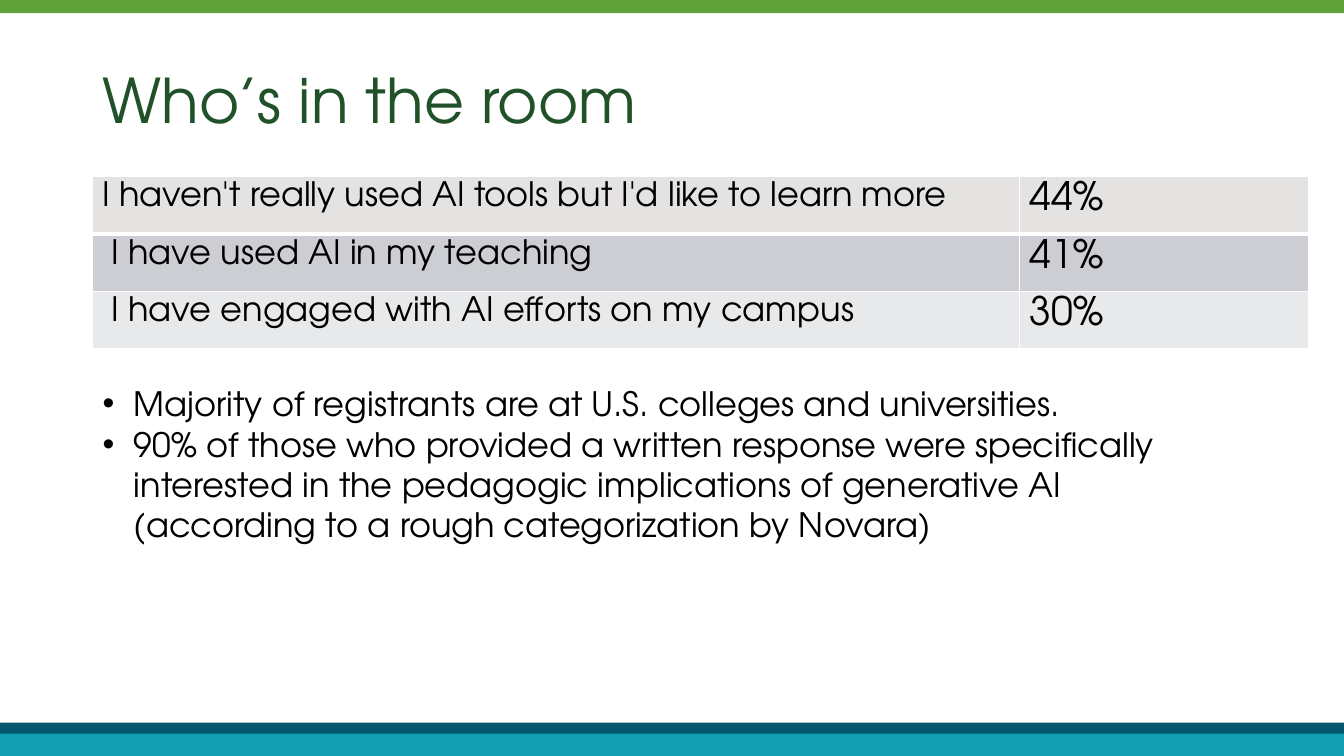
import pptx
import pptx.dml.color
import pptx.enum.shapes
import pptx.enum.text
import pptx.oxml.ns
import pptx.util
from lxml import etree

Cm = pptx.util.Cm
Pt = pptx.util.Pt

FONT = "TeX Gyre Adventor"
COLORS = {
    "green": "5FA039", "navy": "03566C", "teal": "129EB0",
    "title": "205128", "text": "000000", "border": "FFFFFF",
    "first_row": "E4E3E2", "dark_row": "CCCED4", "light_row": "E7E9EB",
}
SURVEY = [
    ("I haven't really used AI tools but I'd like to learn more", "44%", "first_row", 1.14, 0.25),
    ("I have used AI in my teaching", "41%", "dark_row", 1.42, 0.48),
    ("I have engaged with AI efforts on my campus", "30%", "light_row", 1.42, 0.48),
]
FINDINGS = [
    "Majority of registrants are at U.S. colleges and universities.",
    "90% of those who provided a written response were specifically interested in "
    "the pedagogic implications of generative AI (according to a rough categorization by Novara)",
]


def rgb(name):
    """Return the named colour."""
    return pptx.dml.color.RGBColor.from_string(COLORS[name])


def style(para, size, color="text"):
    """Set the font of a paragraph."""
    para.font.name = FONT
    para.font.size = Pt(size)
    para.font.color.rgb = rgb(color)


def place(shape, box):
    """Move a shape to a box given in centimetres."""
    shape.left, shape.top, shape.width, shape.height = map(Cm, box)


def add_bar(page, box, color):
    """Add a plain coloured band."""
    bar = page.shapes.add_shape(pptx.enum.shapes.MSO_SHAPE.RECTANGLE, *map(Cm, box))
    bar.shadow.inherit = False
    bar.fill.solid()
    bar.fill.fore_color.rgb = rgb(color)
    bar.line.fill.background()


def add_bands(page, box):
    """Add the bands along the top and bottom edges of the slide."""
    left, top, width, height = box
    add_bar(page, (left, top, width, 0.33), "green")
    for depth, color in ((0.84, "navy"), (0.56, "teal")):
        add_bar(page, (left, top + height - depth, width, depth), color)


def fill_title(page, box):
    """Place and write the title."""
    title = page.shapes.title
    place(title, box)
    frame = title.text_frame
    frame.text = "Who’s in the room"
    frame.vertical_anchor = pptx.enum.text.MSO_ANCHOR.MIDDLE
    para = frame.paragraphs[0]
    para.alignment = pptx.enum.text.PP_ALIGN.LEFT
    para.line_spacing = 0.9
    style(para, 44, "title")


def set_borders(cell, top, bottom):
    """Draw white cell borders, with top and bottom ones of given widths."""
    properties = cell._tc.get_or_add_tcPr()
    widths = {"lnL": 1, "lnR": 1, "lnT": top, "lnB": bottom}
    for position, (tag, width) in enumerate(widths.items()):
        line = etree.Element(pptx.oxml.ns.qn(f"a:{tag}"), w=str(Pt(width)))
        fill = etree.SubElement(line, pptx.oxml.ns.qn("a:solidFill"))
        etree.SubElement(fill, pptx.oxml.ns.qn("a:srgbClr"), val=COLORS["border"])
        properties.insert(position, line)


def add_survey(page, box):
    """Add the table of survey answers."""
    answer_width = 23.37
    table = page.shapes.add_table(len(SURVEY), 2, *map(Cm, box)).table
    table.columns[0].width = Cm(answer_width)
    table.columns[1].width = Cm(box[2] - answer_width)
    for index, (answer, share, color, height, indent) in enumerate(SURVEY):
        table.rows[index].height = Cm(height)
        for column, (text, size, margin) in enumerate(((answer, 24, indent), (share, 28, 0.25))):
            cell = table.cell(index, column)
            cell.text = text
            cell.margin_left = Cm(margin)
            cell.margin_top = cell.margin_bottom = Cm(0.13)
            cell.fill.solid()
            cell.fill.fore_color.rgb = rgb(color)
            para = cell.text_frame.paragraphs[0]
            style(para, size)
            para.font.bold = False
            set_borders(cell, 3 if index == 1 else 1, 3 if index == 0 else 1)


def fill_findings(page, box):
    """Place and write the bulleted findings."""
    body = page.placeholders[1]
    place(body, box)
    frame = body.text_frame
    frame.text = "\n".join(FINDINGS)
    frame.auto_size = pptx.enum.text.MSO_AUTO_SIZE.SHAPE_TO_FIT_TEXT
    for para in frame.paragraphs:
        properties = para._p.get_or_add_pPr()
        properties.set("marL", str(Cm(0.79)))
        properties.set("indent", str(Cm(-0.79)))
        etree.SubElement(properties, pptx.oxml.ns.qn("a:buFont"), typeface="Arial")
        etree.SubElement(properties, pptx.oxml.ns.qn("a:buChar"), char="•")
        para.space_before = Pt(0)
        style(para, 24)


def main():
    """Build and save the slide."""
    deck = pptx.Presentation()
    deck.slide_width, deck.slide_height = Cm(33.87), Cm(19.05)
    page = deck.slides.add_slide(deck.slide_layouts[1])
    add_bands(page, (0, 0, 33.87, 19.05))
    fill_title(page, (2.33, 0.76, 29.21, 3.68))
    add_survey(page, (2.33, 4.45, 30.66, 3.98))
    fill_findings(page, (2.33, 9.53, 29.21, 5.05))
    deck.save("out.pptx")


if __name__ == "__main__":
    main()
